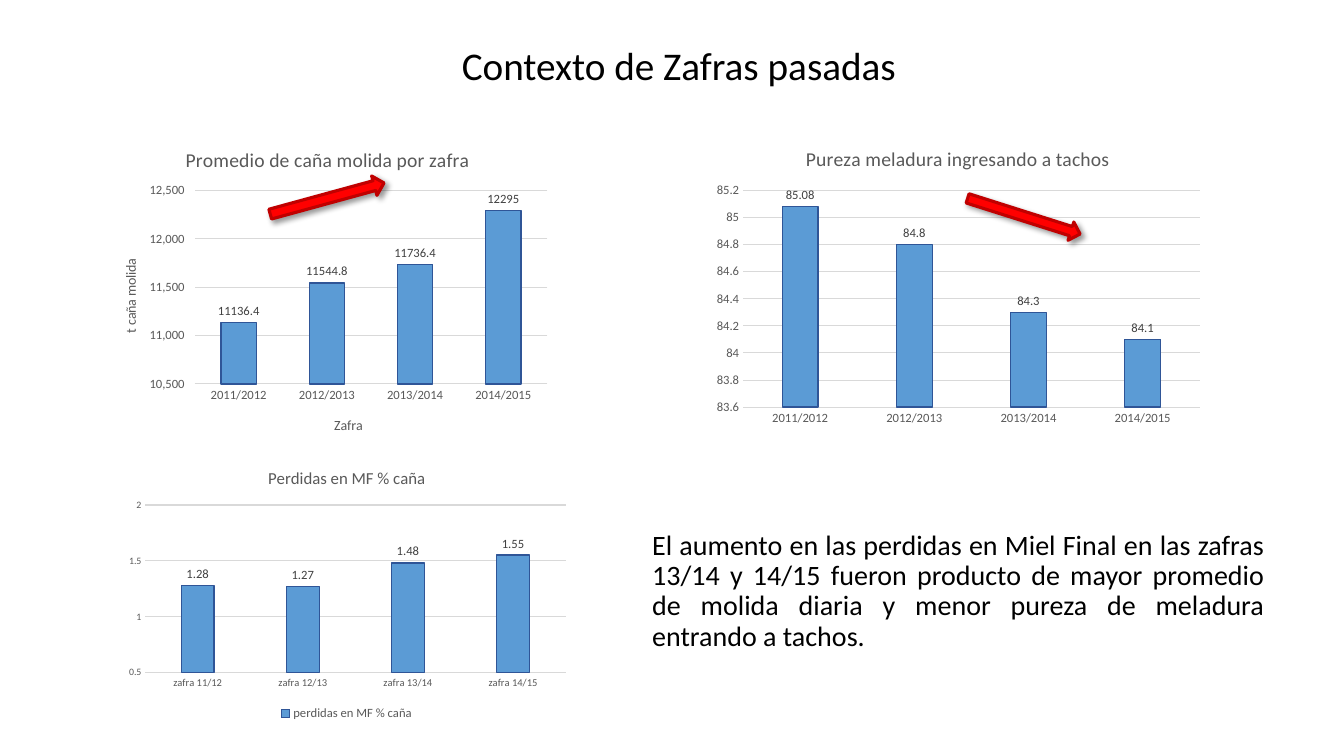
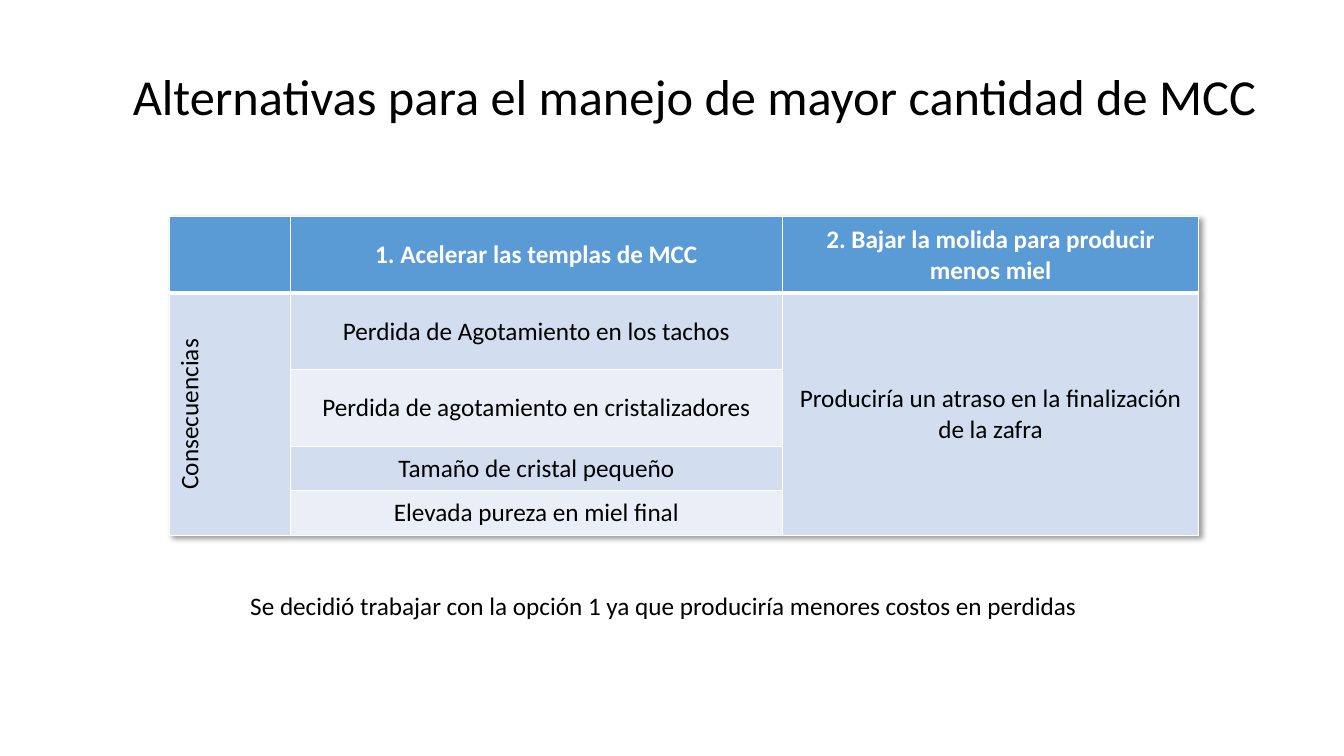
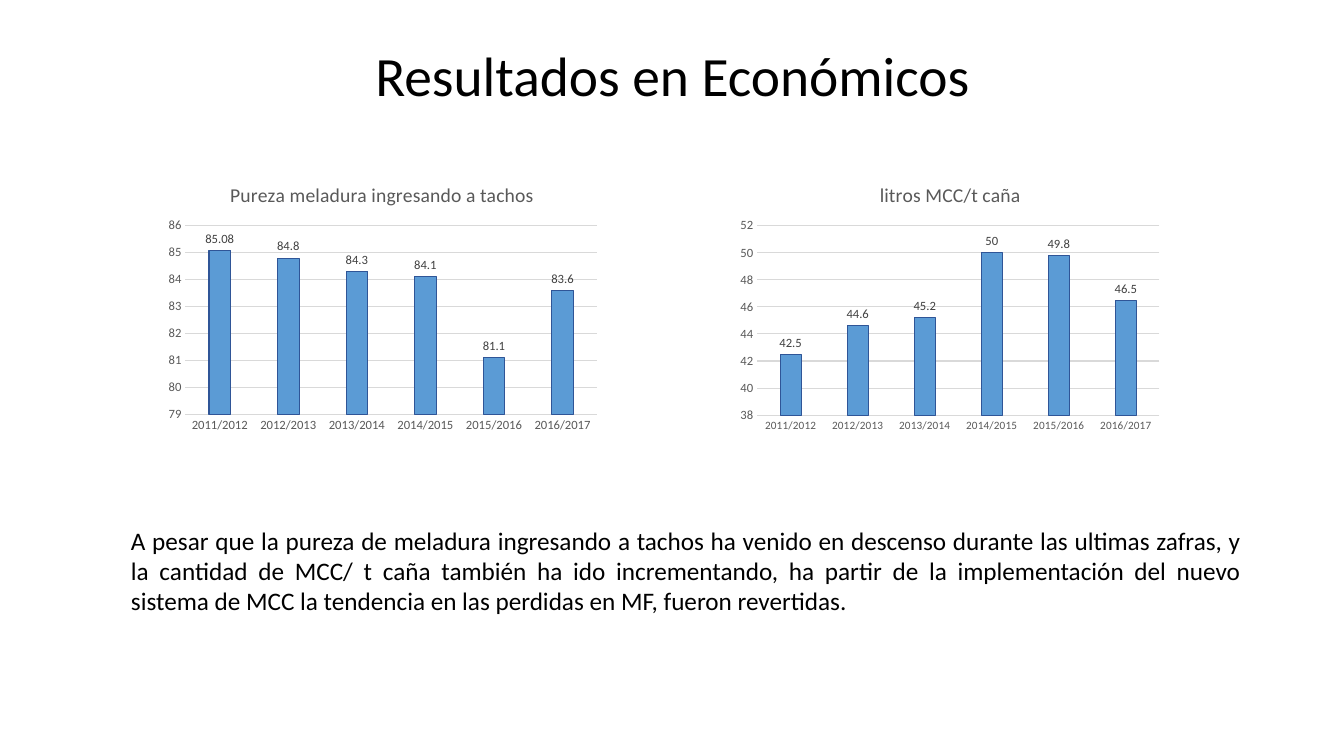
from dataclasses import dataclass
from lxml.etree import SubElement
from pptx import Presentation
from pptx.chart.data import CategoryChartData
from pptx.dml.color import RGBColor as RGB
from pptx.enum.chart import XL_CHART_TYPE as Kind, XL_LEGEND_POSITION as Legend
from pptx.enum.chart import XL_LABEL_POSITION as Label, XL_TICK_MARK as Tick
from pptx.enum.shapes import MSO_SHAPE as Preset
from pptx.enum.text import MSO_ANCHOR as Anchor, MSO_AUTO_SIZE as Fit, PP_ALIGN as Align
from pptx.oxml import parse_xml
from pptx.oxml.ns import nsdecls, qn
from pptx.util import Inches, Pt


@dataclass(frozen=True)
class Theme:
    font: str = "Calibri"
    ink: str = "000000"
    white: str = "FFFFFF"
    gray: str = "595959"
    dark: str = "404040"
    grid: str = "D9D9D9"
    bar: str = "5B9BD5"
    edge: str = "2F5597"
    band: tuple = ("D2DEEF", "EAEFF7")
    red: str = "FF0000"
    rim: str = "C00000"
    head: float = 14
    base: float = 10
    note: float = 9
    body: float = 18


T = Theme()

# Content
YEARS = [f"{y}/{y + 1}" for y in range(2011, 2017)]
PURITY = "Pureza meladura ingresando a tachos"
PURE = [85.08, 84.8, 84.3, 84.1, 81.1, 83.6]

# Each chart: outer box, plot box, value scale (min, max, step), optional style
PAST = [
    dict(title="Perdidas en MF % caña", name="perdidas en MF % caña",
         cats=[f"zafra {y}/{y + 1}" for y in range(11, 15)],
         vals=[1.28, 1.27, 1.48, 1.55], scale=(0.5, 2, 0.5),
         box=(1.18, 4.49, 4.52, 2.7), plot=(1.44, 5.01, 4.17, 1.66),
         head=12, cat=7.5, val=7, legend=True),
    dict(title="Promedio de caña molida por zafra", name="Series 1",
         cats=YEARS[:4], vals=[11136.4, 11544.8, 11736.4, 12295],
         scale=(10500, 12500, 500), fmt="#,##0", gap=150, over=0, tick=Tick.OUTSIDE,
         box=(0.97, 1.3, 4.56, 3.19), plot=(1.93, 1.89, 3.5, 1.92),
         names=[("Zafra", (3.29, 4.1)), ("t caña molida", (1.18, 2.54))]),
    dict(title=PURITY, cats=YEARS[:4], vals=PURE[:4], scale=(83.6, 85.2, 0.2),
         box=(7, 1.29, 5, 3), plot=(7.37, 1.89, 4.53, 2.15)),
]
RESULTS = [
    dict(title="litros MCC/t caña", cats=YEARS, vals=[42.5, 44.6, 45.2, 50, 49.8, 46.5],
         scale=(38, 52, 2), box=(7.26, 1.66, 4.33, 2.69),
         plot=(7.51, 2.24, 3.99, 1.88), cat=8, line=0.75),
    dict(title=PURITY, cats=YEARS, vals=PURE, scale=(79, 86, 1),
         box=(1.58, 1.66, 4.42, 2.69), plot=(1.84, 2.24, 4.08, 1.87), line=0.75),
]
ARROWS = [((2.66, 1.87, 1.17, 0.2), 344.7), ((9.57, 2.05, 1.17, 0.19), 17.6)]

COLS = [1.2, 4.88, 4.13]
ROWS = [0.76, 0.76, 0.76, 0.44, 0.44]
CELLS = [
    ["", "1. Acelerar las templas de MCC", "2. Bajar la molida para producir menos miel"],
    ["Consecuencias", "Perdida de Agotamiento en los tachos",
     "Produciría un atraso en la finalización de la zafra"],
    ["", "Perdida de agotamiento en cristalizadores", ""],
    ["", "Tamaño de cristal pequeño", ""],
    ["", "Elevada pureza en miel final", ""],
]

CAUSE = ("El aumento en las perdidas en Miel Final en las zafras 13/14 y 14/15 fueron "
         "producto de mayor promedio de molida diaria y menor pureza de meladura "
         "entrando a tachos.")
CHOICE = "Se decidió trabajar con la opción 1 ya que produciría menores costos en perdidas"
CLOSE = ("A pesar que la pureza de meladura ingresando a tachos ha venido en descenso "
         "durante las ultimas zafras, y la cantidad de MCC/ t caña también ha ido "
         "incrementando, ha partir de la implementación del nuevo sistema de MCC la "
         "tendencia en las perdidas en MF, fueron revertidas.")


# Shared helpers
def inches(box):
    return [Inches(v) for v in box]


def put(obj, **vals):
    for key, val in vals.items():
        setattr(obj, key, val)


def style(font, size, color=T.ink, bold=False):
    put(font, name=T.font, size=Pt(size), bold=bold)
    font.color.rgb = RGB.from_string(color)


def stroke(line, color, width):
    line.color.rgb = RGB.from_string(color)
    line.width = Pt(width)


def paint(fill, color):
    fill.solid()
    fill.fore_color.rgb = RGB.from_string(color)


def write(frame, text, size, align=Align.LEFT, color=T.ink, bold=False, **para):
    frame.text = text
    line = frame.paragraphs[0]
    put(line, alignment=align, **para)
    style(line.runs[0].font, size, color, bold)


def shadow():
    return parse_xml(
        f'<a:effectLst {nsdecls("a")}><a:outerShdw blurRad="{Pt(4)}" dist="{Pt(3)}" '
        'dir="2700000" algn="tl" rotWithShape="0"><a:srgbClr val="000000">'
        '<a:alpha val="40000"/></a:srgbClr></a:outerShdw></a:effectLst>')


def start(deck, text, box, size, align=Align.CENTER, anchor=Anchor.MIDDLE, **para):
    slide = deck.slides.add_slide(deck.slide_layouts[5])
    title = slide.shapes.title
    put(title, **dict(zip(("left", "top", "width", "height"), inches(box))))
    put(title.text_frame, word_wrap=True, auto_size=Fit.NONE, vertical_anchor=anchor)
    write(title.text_frame, text, size, align, **para)
    return slide


def note(slide, text, box, size, align, **para):
    frame = slide.shapes.add_textbox(*inches(box)).text_frame
    frame.word_wrap = True
    write(frame, text, size, align, **para)


# Charts
def place(node, box, spot, inner=False):
    """Fix a chart part at a spot given in slide inches."""
    old = node.find(qn("c:layout"))
    if old is not None:
        node.remove(old)
    layout = parse_xml(f'<c:layout {nsdecls("c")}><c:manualLayout/></c:layout>')
    manual = layout[0]
    parts = [("layoutTarget", "inner")] if inner else []
    parts += [("xMode", "edge"), ("yMode", "edge")]
    parts += [("x", (spot[0] - box[0]) / box[2]), ("y", (spot[1] - box[1]) / box[3])]
    if inner:
        parts += [("w", spot[2] / box[2]), ("h", spot[3] / box[3])]
    for tag, val in parts:
        SubElement(manual, qn("c:" + tag)).set("val", str(val))
    node.insert(0 if inner else 1, layout)


def draw(slide, title, cats, vals, scale, box, plot, name=None, head=T.head, cat=T.note,
         val=T.note, fmt="General", gap=219, over=-27, tick=Tick.NONE, line=1,
         names=(), legend=False):
    data = CategoryChartData()
    data.categories = cats
    data.add_series(name or title, vals)
    chart = slide.shapes.add_chart(Kind.COLUMN_CLUSTERED, *inches(box), data).chart
    style(chart.font, T.base)
    write(chart.chart_title.text_frame, title, head, Align.CENTER, T.gray)
    chart.chart_title.include_in_layout = False
    chart.has_legend = legend
    if legend:
        put(chart.legend, position=Legend.BOTTOM, include_in_layout=False)
        style(chart.legend.font, T.note, T.gray)

    # Axes
    cax, vax = chart.category_axis, chart.value_axis
    for axis, size in ((cax, cat), (vax, val)):
        put(axis, major_tick_mark=Tick.NONE, minor_tick_mark=Tick.NONE)
        style(axis.tick_labels.font, size, T.gray)
    stroke(cax.format.line, T.grid, 0.75)
    vax.format.line.fill.background()
    low, high, step = scale
    put(vax, minimum_scale=low, maximum_scale=high, major_unit=step,
        major_tick_mark=tick, has_major_gridlines=True)
    put(vax.tick_labels, number_format=fmt, number_format_is_linked=False)
    stroke(vax.major_gridlines.format.line, T.grid, 0.75)
    for axis, (text, spot) in zip((cax, vax), names):
        write(axis.axis_title.text_frame, text, T.base, Align.CENTER, T.gray)
        place(axis.axis_title._element, box, spot)
        if axis is vax:
            turn = axis.axis_title.text_frame._txBody.find(qn("a:bodyPr"))
            put_xml = dict(rot="-5400000", vert="horz")
            turn.attrib.update(put_xml)

    # Bars
    bars = chart.plots[0]
    put(bars, gap_width=gap, overlap=over, vary_by_categories=False, has_data_labels=True)
    put(bars.data_labels, show_value=True, position=Label.OUTSIDE_END,
        number_format="General", number_format_is_linked=False)
    style(bars.data_labels.font, T.note, T.dark)
    look = bars.series[0].format
    paint(look.fill, T.bar)
    stroke(look.line, T.edge, line)
    place(chart._chartSpace.chart.plotArea, box, plot, inner=True)


def arrow(slide, box, angle):
    shape = slide.shapes.add_shape(Preset.RIGHT_ARROW, *inches(box))
    shape.rotation = angle
    paint(shape.fill, T.red)
    stroke(shape.line, T.rim, 2.25)
    shape.shadow.inherit = False
    props = shape._element.spPr
    props.replace(props.find(qn("a:effectLst")), shadow())


# Table
def edges(cell, base):
    props = cell._tc.get_or_add_tcPr()
    for i, (side, width) in enumerate(zip("LRTB", (1, 1, 1, base))):
        props.insert(i, parse_xml(
            f'<a:ln{side} {nsdecls("a")} w="{Pt(width)}"><a:solidFill>'
            f'<a:srgbClr val="{T.white}"/></a:solidFill></a:ln{side}>'))


def grid(slide, left, top):
    size = (left, top, sum(COLS), sum(ROWS))
    table = slide.shapes.add_table(len(ROWS), len(COLS), *inches(size)).table
    table._tbl.tblPr.insert(0, shadow())
    for col, width in zip(table.columns, COLS):
        col.width = Inches(width)
    for r, (row, height) in enumerate(zip(table.rows, ROWS)):
        row.height = Inches(height)
        for c, text in enumerate(CELLS[r]):
            cell, top_row = table.cell(r, c), r == 0
            shade = T.band[(r - 1) % 2 if c == 1 else 0]
            paint(cell.fill, T.bar if top_row else shade)
            edges(cell, 3 if top_row else 1)
            cell.vertical_anchor = Anchor.MIDDLE
            if text:
                write(cell.text_frame, text, T.body, Align.CENTER,
                      T.white if top_row else T.ink, top_row)
    for c in (0, 2):
        table.cell(1, c).merge(table.cell(len(ROWS) - 1, c))
    table.cell(1, 0)._tc.get_or_add_tcPr().set("vert", "vert270")


def main():
    deck = Presentation()
    put(deck, slide_width=Inches(13.33), slide_height=Inches(7.5))

    # Past harvests
    slide = start(deck, "Contexto de Zafras pasadas", (4.48, 0.36, 5.96, 0.57), 28,
                  Align.LEFT, Anchor.TOP)
    for item in PAST:
        draw(slide, **item)
    note(slide, CAUSE, (6.37, 5.22, 6.27, 1.5), 20, Align.JUSTIFY,
         line_spacing=0.9, space_before=Pt(10))
    for box, angle in ARROWS:
        arrow(slide, box, angle)

    # Options
    slide = start(deck, "Alternativas para el manejo de mayor cantidad de MCC",
                  (1.14, 0.56, 11.5, 0.85), 36, line_spacing=0.9)
    grid(slide, 1.68, 2.15)
    note(slide, CHOICE, (0.62, 5.81, 11.92, 0.4), T.body, Align.CENTER)

    # Results
    slide = start(deck, "Resultados en Económicos", (0.92, 0.4, 11.5, 0.75), 39.6,
                  line_spacing=0.9)
    for item in RESULTS:
        draw(slide, **item)
    note(slide, CLOSE, (1.2, 5.16, 11.21, 1.01), T.body, Align.JUSTIFY)

    deck.save("out.pptx")


if __name__ == "__main__":
    main()
